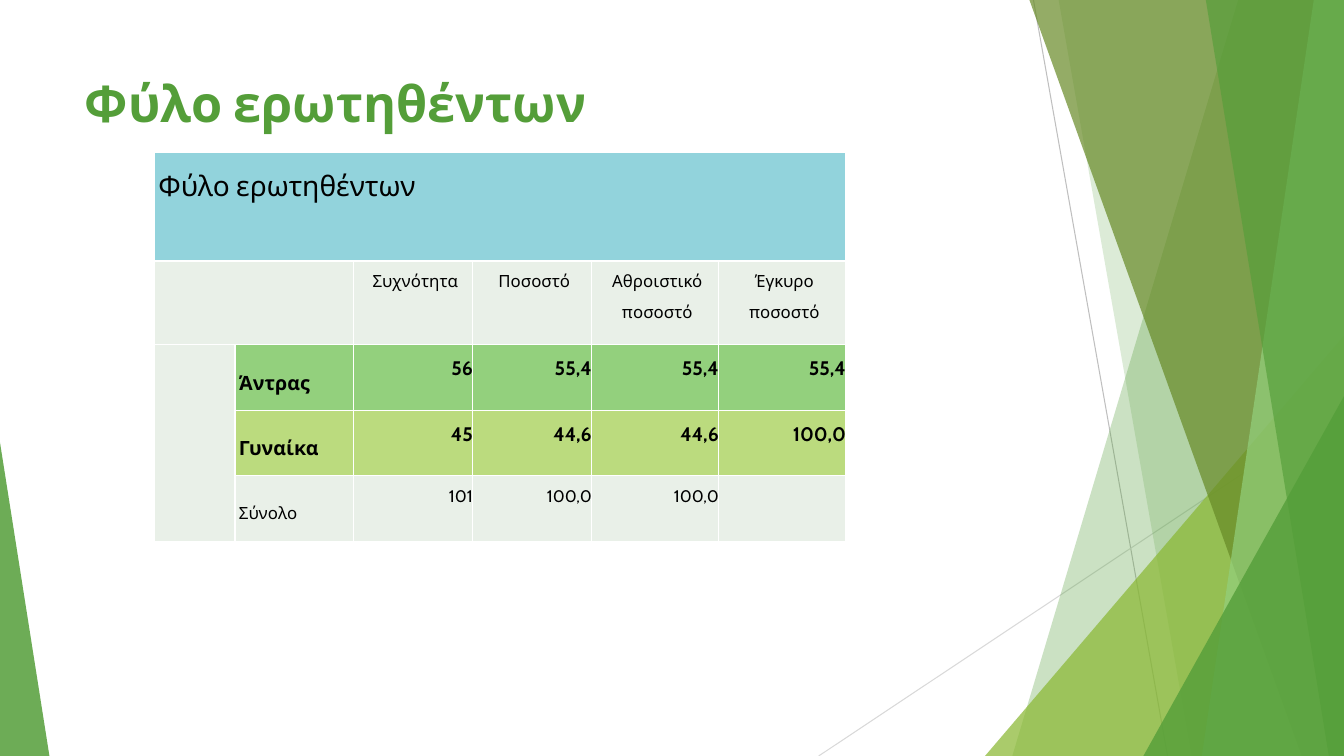
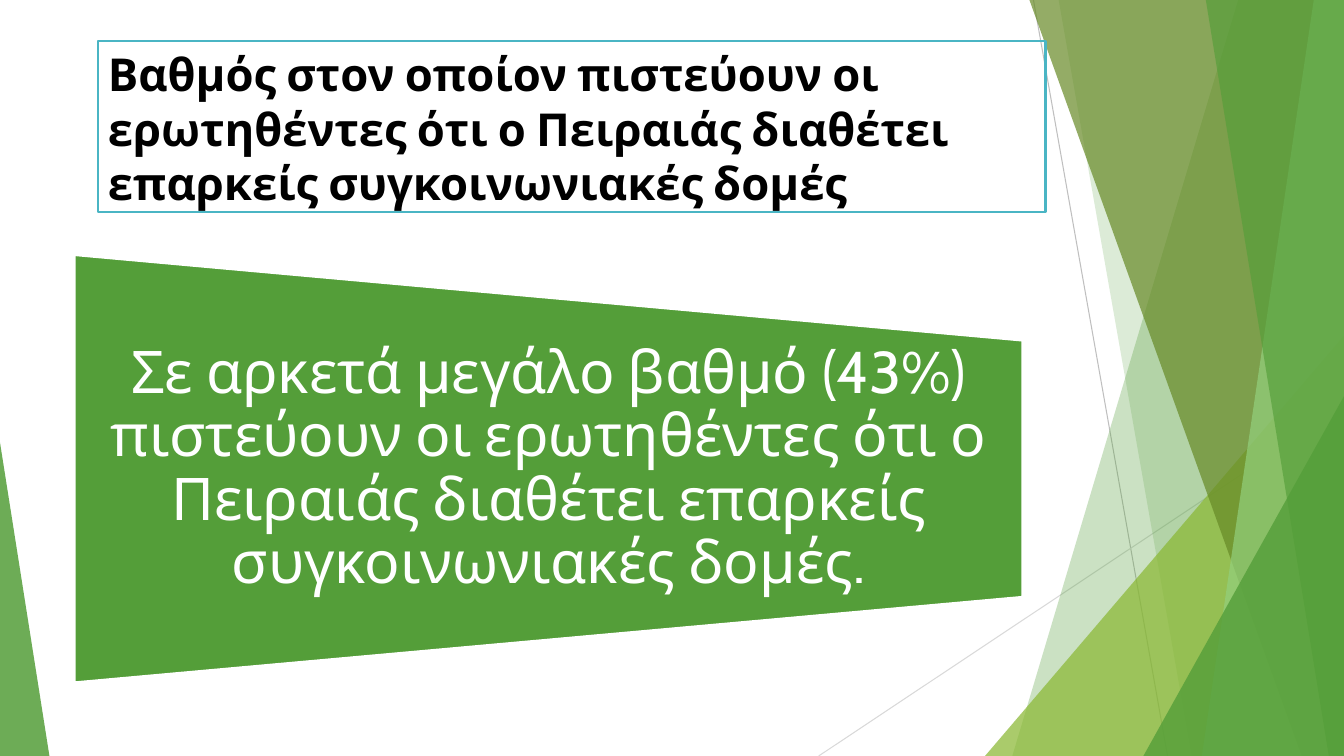
from lxml import etree
from pptx import Presentation
from pptx.dml.color import RGBColor
from pptx.enum.shapes import MSO_CONNECTOR, MSO_SHAPE
from pptx.enum.text import MSO_ANCHOR, MSO_AUTO_SIZE, PP_ALIGN
from pptx.oxml.ns import qn
from pptx.util import Pt

LEFT, CENTER, RIGHT = PP_ALIGN.LEFT, PP_ALIGN.CENTER, PP_ALIGN.RIGHT
TOP, MIDDLE = MSO_ANCHOR.TOP, MSO_ANCHOR.MIDDLE
TRIANGLE = MSO_SHAPE.ISOSCELES_TRIANGLE
TRAPEZOID = MSO_SHAPE.FLOWCHART_MANUAL_OPERATION
STRAIGHT = MSO_CONNECTOR.STRAIGHT
NO_FIT = MSO_AUTO_SIZE.NONE

EMU_PER_PX = 9144
WIDTH, HEIGHT = 1333, 750
FONT = "Cabin"
GREEN, LIGHT_GREEN, LIME, PALE_LIME, OLIVE = "549E39", "93D07D", "8AB833", "BBDB7E", "678A26"
TEAL, PALE_TEAL = "4AB5C4", "92D3DC"
BLACK, WHITE, MIST = "000000", "FFFFFF", "E9F0E8"


def px(length):
    return length * EMU_PER_PX


def color(value):
    return RGBColor.from_string(value)


def write(frame, text, *, size, ink=BLACK, bold=False, align=LEFT, spacing=None, indent=0):
    para = frame.paragraphs[0]
    para.alignment = align
    if spacing:
        para.line_spacing = spacing
    if indent:
        properties = para._p.get_or_add_pPr()
        properties.set("marL", str(px(indent)))
        properties.set("indent", "0")
    span = para.add_run()
    span.text = text
    span.font.name = FONT
    span.font.size = Pt(size)
    span.font.bold = bold
    span.font.color.rgb = color(ink)


class SlideMaker:
    def __init__(self):
        self.deck = Presentation()
        self.deck.slide_width, self.deck.slide_height = px(WIDTH), px(HEIGHT)
        self.layout = self.deck.slide_layouts[5]
        self.page = None

    def new_page(self):
        self.page = self.deck.slides.add_slide(self.layout)

    def title(self, text, left, top, width, height, *, size, ink, border=None):
        box = self.page.shapes.title
        box.left, box.top, box.width, box.height = map(px, (left, top, width, height))
        frame = box.text_frame
        frame.word_wrap = True
        frame.auto_size = NO_FIT
        frame.vertical_anchor = TOP
        write(frame, text, size=size, ink=ink, bold=True)
        if border:
            box.line.color.rgb = color(border)
            box.line.width = Pt(1.5)

    def paint(self, shape, fill, opacity=100, outline=None):
        shape.shadow.inherit = False
        shape.fill.solid()
        shape.fill.fore_color.rgb = color(fill)
        if opacity < 100:
            tint = shape.element.spPr.find(".//" + qn("a:srgbClr"))
            etree.SubElement(tint, qn("a:alpha")).set("val", str(opacity * 1000))
        if outline:
            shape.line.color.rgb = color(outline)
            shape.line.width = Pt(1.5)
        else:
            shape.line.fill.background()

    def line(self, shapes, start, end, ink):
        connector = shapes.add_connector(STRAIGHT, *map(px, start + end))
        connector.line.color.rgb = color(ink)
        connector.line.width = Pt(0.75)
        etree.SubElement(connector.element.spPr, qn("a:effectLst"))

    def blade(self, shapes, top_left, bottom_left, fill, opacity):
        builder = shapes.build_freeform(px(top_left), 0)
        corners = [(WIDTH, 0), (WIDTH, HEIGHT), (bottom_left, HEIGHT)]
        builder.add_line_segments([(px(x), px(y)) for x, y in corners], close=True)
        self.paint(builder.convert_to_shape(), fill, opacity)

    def corner(self, shapes, left, top, width, apex, fill, opacity):
        triangle = shapes.add_shape(TRIANGLE, px(left), px(top), px(width), px(HEIGHT - top))
        triangle.adjustments[0] = apex
        self.paint(triangle, fill, opacity)

    def decorate_layout(self):
        group = self.page.shapes.add_group_shape()
        shapes = group.shapes
        self.line(shapes, (1025, 0), (1158, HEIGHT), "BFBFBF")
        self.line(shapes, (WIDTH, 403), (812, HEIGHT), "D9D9D9")
        self.blade(shapes, 1228, 1004, GREEN, 30)
        self.blade(shapes, 1050, 1182, GREEN, 20)
        self.corner(shapes, 977, 333, 356, 1, LIME, 72)
        self.blade(shapes, 1021, 1291, OLIVE, 70)
        self.blade(shapes, 1303, 1192, LIGHT_GREEN, 70)
        self.blade(shapes, 1196, 1318, GREEN, 65)
        self.corner(shapes, 1134, 393, 199, 1, GREEN, 80)
        self.corner(shapes, 0, 439, 49, 0, GREEN, 85)
        for number, item in enumerate(group.element.iter(qn("p:cNvPr")), 100):
            item.set("id", str(number))
        self.layout.shapes.element.insert(2, group.element)

    def trapezoid(self, left, top, width, height, fill):
        shape = self.page.shapes.add_shape(TRAPEZOID, *map(px, (left, top, width, height)))
        shape.rotation = 270
        self.paint(shape, fill, outline=WHITE)

    def text_box(self, text, left, top, width, height, *, inset, **style):
        box = self.page.shapes.add_textbox(*map(px, (left, top, width, height)))
        frame = box.text_frame
        frame.word_wrap = True
        frame.vertical_anchor = MIDDLE
        frame.margin_left = frame.margin_right = px(inset)
        frame.margin_top = frame.margin_bottom = 0
        write(frame, text, **style)

    def table(self, left, top, columns, rows):
        frame = self.page.shapes.add_table(
            len(rows), len(columns), px(left), px(top), px(sum(columns)), px(sum(rows)))
        table = frame.table
        table.first_row = table.horz_banding = False
        for column, width in zip(table.columns, columns):
            column.width = px(width)
        for row, height in zip(table.rows, rows):
            row.height = px(height)
        return table

    def cell(self, cell, text, fill, *, anchor=TOP, **style):
        cell.margin_left = cell.margin_right = cell.margin_top = cell.margin_bottom = 0
        cell.vertical_anchor = anchor
        properties = cell._tc.get_or_add_tcPr()
        for side in ("a:lnL", "a:lnR", "a:lnT", "a:lnB"):
            border = etree.SubElement(properties, qn(side), w=str(Pt(1)))
            solid = etree.SubElement(border, qn("a:solidFill"))
            etree.SubElement(solid, qn("a:srgbClr"), val=WHITE)
        cell.fill.solid()
        cell.fill.fore_color.rgb = color(fill)
        if text:
            write(cell.text_frame, text, spacing=1.5, indent=4, **style)


def gender_page(maker):
    heading = "Φύλο ερωτηθέντων"
    maker.title(heading, 74, 67, 940, 144, size=36, ink=GREEN)
    table = maker.table(153, 151, [80, 118, 118, 118, 126, 126], [108, 83, 65, 65, 65])
    for first, last in (((0, 0), (0, 5)), ((1, 0), (1, 1)), ((2, 0), (4, 0))):
        table.cell(*first).merge(table.cell(*last))
    for column in range(6):
        maker.cell(table.cell(0, column), "" if column else heading, PALE_TEAL, size=20)
    labels = ["", "", "Συχνότητα", "Ποσοστό", "Αθροιστικό ποσοστό", "Έγκυρο ποσοστό"]
    for column, label in enumerate(labels):
        maker.cell(table.cell(1, column), label, MIST, size=12, align=CENTER)
    answers = [
        (LIGHT_GREEN, 14, True, ["Άντρας", "56", "55,4", "55,4", "55,4"]),
        (PALE_LIME, 14, True, ["Γυναίκα", "45", "44,6", "44,6", "100,0"]),
        (MIST, 12, False, ["Σύνολο", "101", "100,0", "100,0", ""]),
    ]
    for row, (fill, size, bold, values) in enumerate(answers, 2):
        maker.cell(table.cell(row, 0), "", MIST)
        for column, value in enumerate(values, 1):
            is_label = column == 1
            maker.cell(table.cell(row, column), value, fill, size=size, bold=bold,
                       anchor=MIDDLE if is_label else TOP,
                       align=LEFT if is_label else RIGHT)


def transport_page(maker):
    maker.title(
        "Βαθμός στον οποίον πιστεύουν οι ερωτηθέντες ότι ο Πειραιάς διαθέτει "
        "επαρκείς συγκοινωνιακές δομές",
        97, 41, 940, 169, size=32.4, ink=BLACK, border=TEAL)
    maker.trapezoid(332, -5, 424, 940, GREEN)
    maker.text_box(
        "Σε αρκετά μεγάλο βαθμό (43%) πιστεύουν οι ερωτηθέντες ότι ο Πειραιάς "
        "διαθέτει επαρκείς συγκοινωνιακές δομές.",
        74, 338, 940, 255, inset=29, size=42, ink=WHITE, align=CENTER, spacing=0.9)


def main():
    maker = SlideMaker()
    maker.new_page()
    maker.decorate_layout()
    gender_page(maker)
    maker.new_page()
    transport_page(maker)
    maker.deck.save("out.pptx")


if __name__ == "__main__":
    main()
